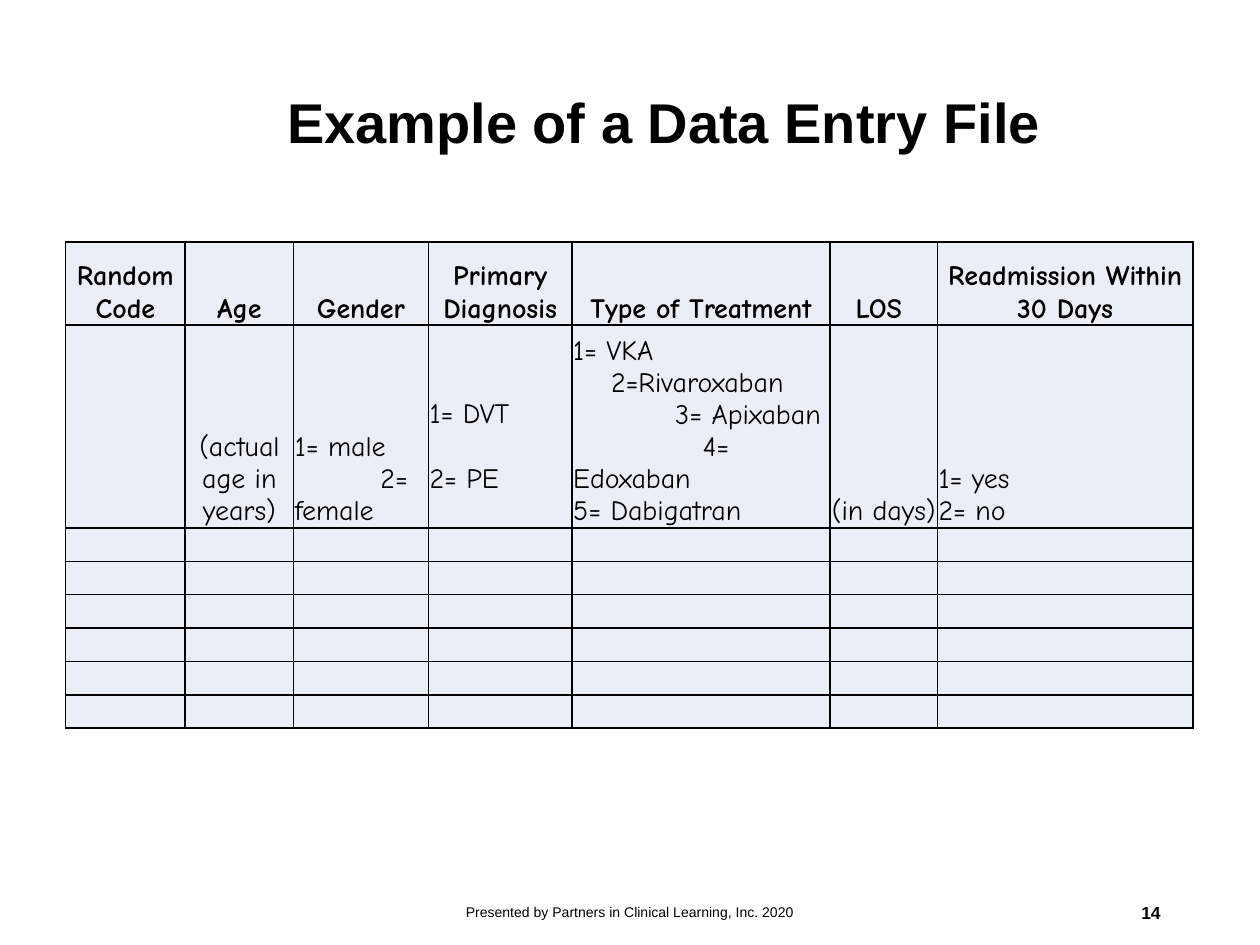
from lxml.etree import SubElement
from pptx import Presentation
from pptx.dml.color import RGBColor
from pptx.enum.text import MSO_ANCHOR as ANCHOR, PP_ALIGN as ALIGN
from pptx.oxml.ns import qn
from pptx.util import Inches, Pt

BLACK, PALE_BLUE = "000000", "EAEFF7"
COLUMNS = [0.95, 0.86, 1.07, 1.14, 2.05, 0.85, 2.03]
ROWS = [0.66, 1.54] + [0.265] * 6
HEADERS = ["Random Code", "Age", "Gender", "Primary Diagnosis",
           "Type of Treatment", "LOS ", "Readmission Within 30 Days"]
LINE = 0.26

# Column: list of (text, first-line indent in inches)
CODES = {
    2: [("1= male", 0), ("2= female", 0.68)],
    3: [("1= DVT", 0), ("2= PE", 0)],
    4: [("1= VKA", 0), ("2=Rivaroxaban", 0.3), ("3= Apixaban", 0.81),
        ("4= Edoxaban", 1.03), ("5= Dabigatran", 0)],
    6: [("1= yes", 0), ("2= no", 0)],
}
UNITS = {1: "(actual age in years)", 5: "(in days)"}


def color(value):
    return RGBColor.from_string(value)


def style(p, size, name, bold=False, align=ALIGN.LEFT):
    p.alignment = align
    for r in p.runs:
        r.font.size, r.font.name, r.font.bold = Pt(size), name, bold
        r.font.color.rgb = color(BLACK)


def add_label(slide, box, text, size, bold=False, align=ALIGN.LEFT, spacing=1.0):
    tf = slide.shapes.add_textbox(*map(Inches, box)).text_frame
    tf.word_wrap = True
    tf.vertical_anchor = ANCHOR.MIDDLE
    tf.text = text
    p = tf.paragraphs[0]
    p.line_spacing = spacing
    style(p, size, "Arial", bold, align)


def format_cell(cell):
    """Give the cell its borders, fill, margins and anchor."""
    tc_pr = cell._tc.get_or_add_tcPr()
    for side in ("lnL", "lnR", "lnT", "lnB"):
        ln = SubElement(tc_pr, qn(f"a:{side}"), w=str(Pt(1)))
        SubElement(SubElement(ln, qn("a:solidFill")), qn("a:srgbClr"), val=BLACK)
    cell.fill.solid()
    cell.fill.fore_color.rgb = color(PALE_BLUE)
    cell.margin_left = cell.margin_right = cell.margin_top = Inches(0.01)
    cell.margin_bottom = 0
    cell.vertical_anchor = ANCHOR.BOTTOM


def write_centred(cell, text, bold):
    cell.text = text
    style(cell.text_frame.paragraphs[0], 16, "Comic Neue", bold, ALIGN.CENTER)


def write_codes(cell, codes):
    tf = cell.text_frame
    tf.text = "\n".join(text for text, _ in codes)
    for p, (_, indent) in zip(tf.paragraphs, codes):
        p._p.get_or_add_pPr().set("indent", str(Inches(indent)))
        style(p, 16, "Comic Neue")


def add_entry_table(slide, left, top):
    frame = slide.shapes.add_table(len(ROWS), len(COLUMNS), Inches(left), Inches(top),
                                   Inches(sum(COLUMNS)), Inches(sum(ROWS)))
    table = frame.table
    table.first_row = table.horz_banding = False
    for column, width in zip(table.columns, COLUMNS):
        column.width = Inches(width)
    for row, height in zip(table.rows, ROWS):
        row.height = Inches(height)
    for cell in table.iter_cells():
        format_cell(cell)
    for i, text in enumerate(HEADERS):
        write_centred(table.cell(0, i), text, True)
    for i, text in UNITS.items():
        write_centred(table.cell(1, i), text, False)
    for i, codes in CODES.items():
        write_codes(table.cell(1, i), codes)
    diagnosis = table.cell(1, 3)
    diagnosis.text_frame.paragraphs[1].space_before = Inches(LINE)
    diagnosis.margin_bottom = Inches(LINE)
    for cell in table.iter_cells():
        if not cell.text:
            SubElement(cell.text_frame.paragraphs[0]._p, qn("a:endParaRPr"), sz="1000")


def add_footer(slide, top, height):
    add_label(slide, (3.31, top, 3.38, height),
              "Presented by Partners in Clinical Learning, Inc. 2020", 8, align=ALIGN.CENTER)
    add_label(slide, (7.06, top, 2.25, height), "14", 10, True, ALIGN.RIGHT)


def main():
    prs = Presentation()
    prs.slide_width, prs.slide_height = Inches(10), Inches(7.5)
    slide = prs.slides.add_slide(prs.slide_layouts[6])
    add_label(slide, (2.18, 0.27, 7.14, 1.45), "Example of a Data Entry File",
              32, True, spacing=0.9)
    add_entry_table(slide, 0.52, 1.92)
    add_footer(slide, 7.04, 0.4)
    prs.save("out.pptx")


if __name__ == "__main__":
    main()
